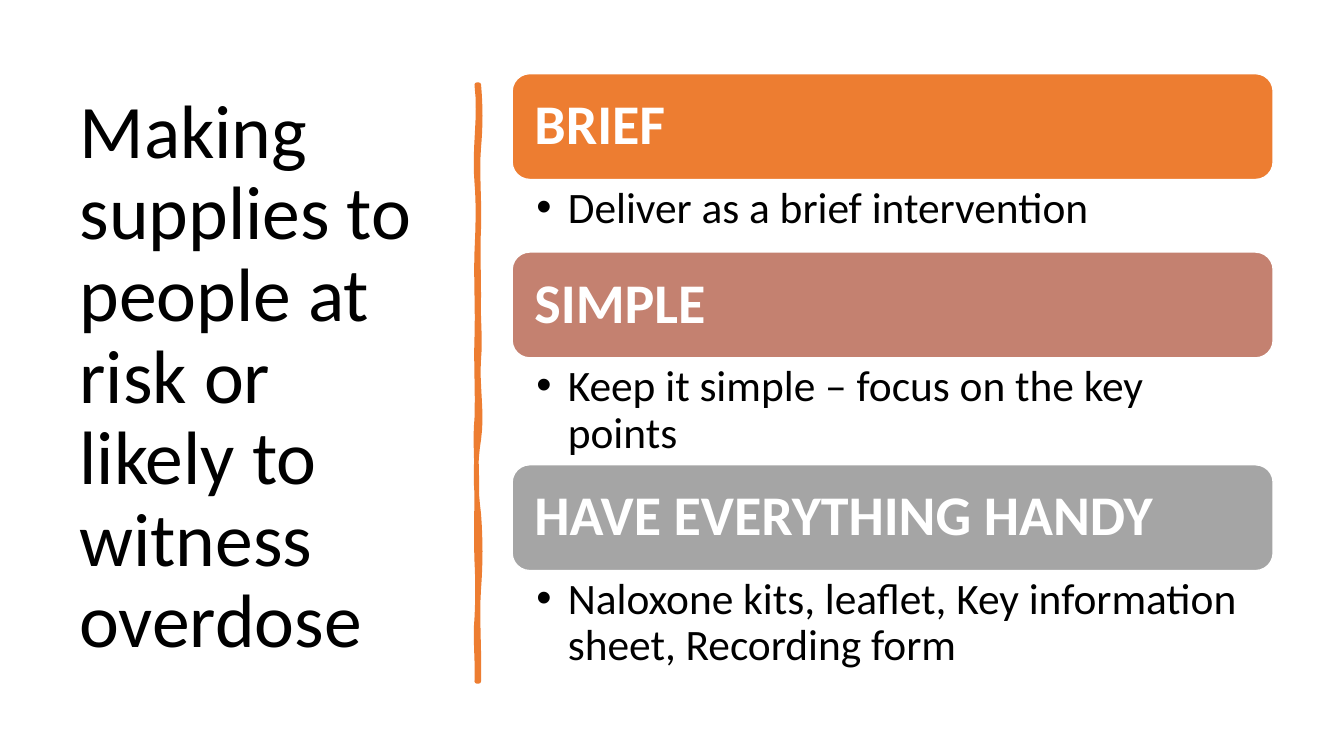
from lxml.etree import SubElement
from pptx import Presentation
from pptx.dml.color import RGBColor as RGB
from pptx.enum.shapes import MSO_SHAPE as SHAPE
from pptx.enum.text import MSO_ANCHOR as ANCHOR, PP_ALIGN as ALIGN
from pptx.oxml.ns import qn
from pptx.util import Pt

COLORS = {"text": "000000", "white": "FFFFFF", "orange": "ED7D31",
          "rose": "C48170", "grey": "A5A5A5"}


class SlideBuilder:
    font = "Calibri"

    def __init__(self, slide):
        self.shapes = slide.shapes

    def paint(self, sp, fill, line, width):
        sp.shadow.inherit = False
        sp.fill.solid()
        sp.fill.fore_color.rgb = RGB.from_string(COLORS[fill])
        sp.line.color.rgb = RGB.from_string(COLORS[line])
        sp.line.width = Pt(width)

    def set_text(self, sp, text, size, color="text", bold=False,
                 anchor=ANCHOR.TOP, insets=(7.2, 3.6, 7.2, 3.6), bullet=None):
        tf = sp.text_frame
        left, top, right, bottom = map(Pt, insets)
        frame = {"word_wrap": True, "vertical_anchor": anchor,
                 "margin_left": left, "margin_top": top,
                 "margin_right": right, "margin_bottom": bottom}
        for name, value in frame.items():
            setattr(tf, name, value)
        p = tf.paragraphs[0]
        if bullet:
            pPr = p._p.get_or_add_pPr()
            pPr.set("marL", str(Pt(bullet)))
            pPr.set("indent", str(-Pt(bullet)))
            SubElement(pPr, qn("a:buFont")).set("typeface", "Arial")
            SubElement(pPr, qn("a:buChar")).set("char", "•")
        p.alignment = ALIGN.LEFT
        p.line_spacing = 0.9
        r = p.add_run()
        r.text = text
        for name, value in {"name": self.font, "size": Pt(size), "bold": bold}.items():
            setattr(r.font, name, value)
        r.font.color.rgb = RGB.from_string(COLORS[color])

    def text(self, x, y, w, h, text, size, **style):
        self.set_text(self.shapes.add_textbox(Pt(x), Pt(y), Pt(w), Pt(h)), text, size, **style)

    def banner(self, x, y, w, h, text, fill):
        sp = self.shapes.add_shape(SHAPE.ROUNDED_RECTANGLE, Pt(x), Pt(y), Pt(w), Pt(h))
        self.paint(sp, fill, "white", 1)
        self.set_text(sp, text, 40, color="white", bold=True,
                      anchor=ANCHOR.MIDDLE, insets=(12.24,) * 4)

    def brush_stroke(self, edges, color, width, steps=8):
        points = []
        for x, start, bends in edges:
            points.append((Pt(x), Pt(start)))
            for end, b1, b2 in bends:
                for i in range(1, steps + 1):
                    t = i / steps
                    bend = 3 * t * (1 - t) * ((1 - t) * b1 + t * b2)
                    points.append((Pt(x + bend), Pt(start + (end - start) * t)))
                start = end
        builder = self.shapes.build_freeform(*points[0])
        builder.add_line_segments(points[1:], close=True)
        self.paint(builder.convert_to_shape(), color, color, width)


# Each bend: end height, then sideways pull of its two control points
RIGHT_BENDS = [(105.1, 1.4, 1.4), (162.7, -1.4, 0.7), (211.7, -0.7, 0),
               (256.3, -0.7, 1.4), (313.9, -1.4, 2.9), (367.2, -2.9, -2.2),
               (420.5, 1.4, 1.4), (486.7, -1.4, 0.7)]
LEFT_BENDS = [(441.4, 0.7, -1.4), (401, 0.7, 0.7), (343.4, -0.7, 0),
              (298.8, 0, -1.4), (241.2, 0.7, -0.7), (180, 0.7, -0.7),
              (130.3, 0.7, 1.4), (60.5, -2.2, 2.9)]

# Heading, colour, detail, detail height
TIPS = [
    ("BRIEF", "orange", "Deliver as a brief intervention", 51.84),
    ("SIMPLE", "rose", "Keep it simple – focus on the key points", 76.32),
    ("HAVE EVERYTHING HANDY", "grey",
     "Naloxone kits, leaflet, Key information sheet, Recording form", 76.32),
]


def main():
    prs = Presentation()
    prs.slide_width, prs.slide_height = Pt(960), Pt(540)
    s = SlideBuilder(prs.slides.add_slide(prs.slide_layouts[6]))

    # Title and hand-drawn divider
    s.text(49.7, 50.4, 269.3, 440, "Making supplies to people at risk or likely to witness overdose",
           54, anchor=ANCHOR.MIDDLE)
    s.brush_stroke([(342, 60.5, RIGHT_BENDS), (340.6, 486.7, LEFT_BENDS)], "orange", 3.25)

    # Stacked tips
    x, y, w, banner_h = 365.8, 52.6, 543.6, 75.6
    for heading, color, detail, detail_h in TIPS:
        s.banner(x, y, w, banner_h, heading, color)
        y += banner_h
        s.text(x, y, w, detail_h, detail, 31, insets=(17.3, 4.3, 22.3, 4.3), bullet=22.5)
        y += detail_h

    prs.save("out.pptx")


if __name__ == "__main__":
    main()
